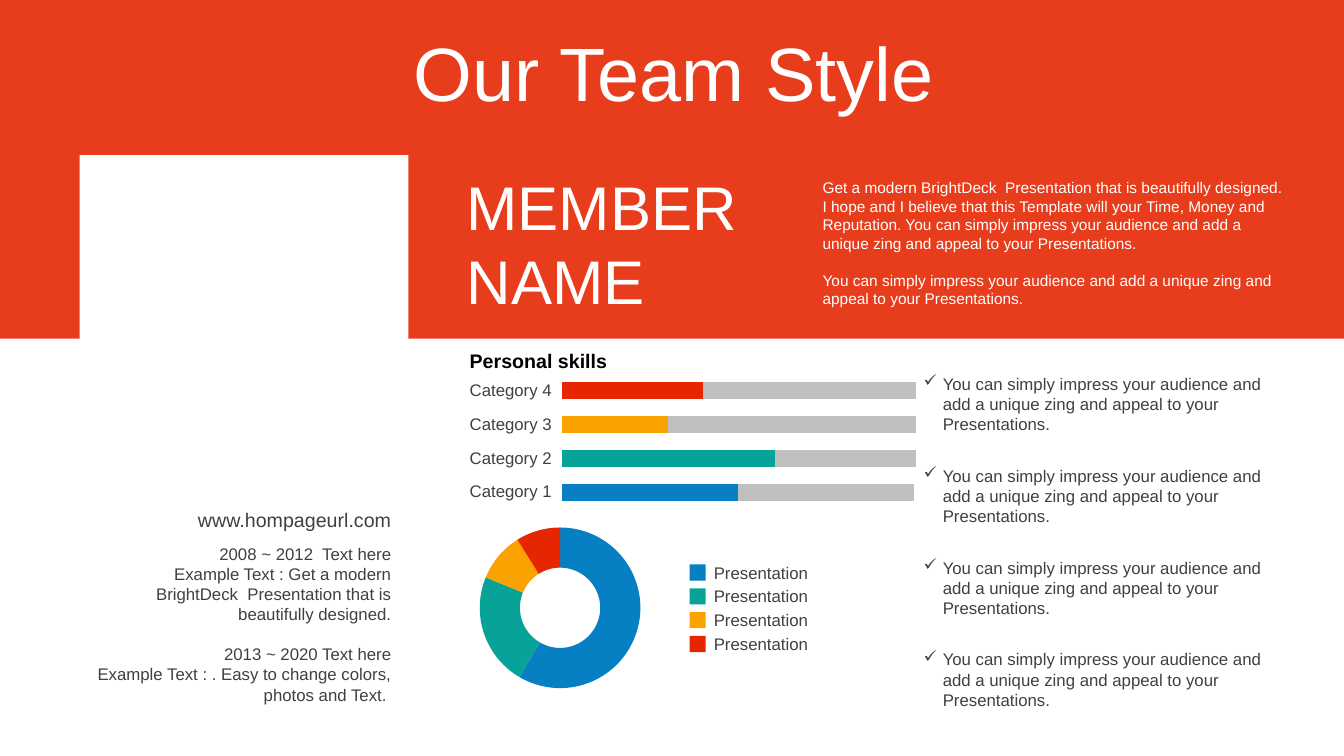
from lxml import etree
from pptx import Presentation
from pptx import util as u
from pptx.chart.data import CategoryChartData
from pptx.dml.color import RGBColor
from pptx.enum import chart as ch, shapes, text
from pptx.oxml.ns import qn

BLUE, TEAL, AMBER, RED = PALETTE = ["0680C3", "07A398", "FBA200", "E62601"]
WHITE, BLACK, INK, GREY = "FFFFFF", "000000", "404040", "BFBFBF"
IMPRESS = ("You can simply impress your audience and add a unique zing "
           "and appeal to your Presentations.")


def color(value):
    return RGBColor.from_string(value)


def paint(fill, value):
    fill.solid()
    fill.fore_color.rgb = color(value)


def inner_layout(chart, x, y, w, h):
    """Fix the plot area as fractions of the chart frame."""
    plot_area = chart._chartSpace.chart.plotArea
    for old in plot_area.findall(qn("c:layout")):
        plot_area.remove(old)
    layout = etree.Element(qn("c:layout"))
    manual = etree.SubElement(layout, qn("c:manualLayout"))
    for tag, val in [("layoutTarget", "inner"), ("xMode", "edge"),
                     ("yMode", "edge"), ("x", x), ("y", y), ("w", w), ("h", h)]:
        etree.SubElement(manual, qn("c:" + tag)).set("val", str(val))
    plot_area.insert(0, layout)


class Board:
    """Holds the style and the current slide."""
    font = "Arial"

    def __init__(self, slide):
        self.slide = slide

    def rect(self, x, y, w, h, fill, alpha=None):
        box = self.slide.shapes.add_shape(
            shapes.MSO_SHAPE.RECTANGLE, *map(u.Inches, (x, y, w, h)))
        box.shadow.inherit = False
        paint(box.fill, fill)
        box.line.fill.background()
        if alpha is not None:
            tint = box.fill._xPr.find(".//" + qn("a:srgbClr"))
            etree.SubElement(tint, qn("a:alpha")).set("val", str(alpha * 1000))

    def text(self, content, x, y, w, h, size=12, ink=INK, bold=False,
             align="LEFT", anchor="TOP", inset=0.1, bullet=None,
             gap_before=(), gap=0, line_spacing=None):
        """content is a list of paragraphs; gap_before lists those set apart."""
        box = self.slide.shapes.add_textbox(*map(u.Inches, (x, y, w, h)))
        frame = box.text_frame
        frame.word_wrap = True
        frame.vertical_anchor = text.MSO_ANCHOR[anchor]
        frame.margin_left = frame.margin_right = u.Inches(inset)
        for i, words in enumerate(content):
            para = frame.paragraphs[0] if i == 0 else frame.add_paragraph()
            para.alignment = text.PP_ALIGN[align]
            if line_spacing:
                para.line_spacing = line_spacing
            if i in gap_before:
                para.space_before = u.Pt(gap)
            run = para.add_run()
            run.text = words
            run.font.name, run.font.size = self.font, u.Pt(size)
            run.font.bold = bold
            run.font.color.rgb = color(ink)
            if bullet:
                props = para._p.get_or_add_pPr()
                props.set("marL", str(u.Inches(0.19)))
                props.set("indent", str(-u.Inches(0.19)))
                etree.SubElement(props, qn("a:buChar")).set("char", bullet)

    def chart(self, kind, categories, series, x, y, w, h, layout):
        data = CategoryChartData()
        data.categories = categories
        for name, values in series:
            data.add_series(name, values)
        chart = self.slide.shapes.add_chart(
            ch.XL_CHART_TYPE[kind], *map(u.Inches, (x, y, w, h)), data).chart
        chart.has_legend = chart.has_title = False
        chart.font.name, chart.font.size = self.font, u.Pt(12)
        chart.font.color.rgb = color(INK)
        chart.plots[0].vary_by_categories = False
        for i, tint in enumerate(PALETTE):
            paint(chart.plots[0].series[0].points[i].format.fill, tint)
        inner_layout(chart, *layout)
        return chart


def main():
    deck = Presentation()
    deck.slide_width, deck.slide_height = u.Inches(13.33), u.Inches(7.5)
    board = Board(deck.slides.add_slide(deck.slide_layouts[6]))

    # Header band and photo area
    board.rect(0, 0, 13.33, 3.36, RED, alpha=89)
    board.rect(0.79, 1.54, 3.26, 3.65, WHITE)
    board.text(["Our Team Style"], 0.35, 0.37, 12.66, 0.79, size=54, ink=WHITE,
               align="CENTER", anchor="MIDDLE", line_spacing=0.9,
               gap_before=[0], gap=10)

    # Member name and introduction
    board.text(["MEMBER", "NAME"], 4.53, 1.63, 3.33, 1.58, size=44, ink=WHITE)
    board.text(["Get a modern BrightDeck  Presentation that is beautifully "
                "designed. I hope and I believe that this Template will your "
                "Time, Money and Reputation. You can simply impress your "
                "audience and add a unique zing and appeal to your "
                "Presentations.", IMPRESS],
               8.06, 1.72, 4.78, 1.4, size=11, ink=WHITE, gap_before=[1], gap=13.2)

    # Contact and career
    board.text(["www.hompageurl.com"], 1.65, 4.99, 2.33, 0.34, size=14,
               align="RIGHT", anchor="MIDDLE")
    board.text(["2008 ~ 2012  Text here",
                "Example Text : Get a modern BrightDeck  Presentation that is "
                "beautifully designed.",
                "2013 ~ 2020 Text here",
                "Example Text : . Easy to change colors, photos and Text. "],
               0.79, 5.34, 3.19, 1.72, align="RIGHT", gap_before=[2], gap=14.4)

    # Personal skills bars
    board.text(["Personal skills"], 4.56, 3.41, 3.43, 0.34, size=14, ink=BLACK,
               bold=True)
    skills = board.chart(
        "BAR_STACKED", [f"Category {n}" for n in range(1, 5)],
        [("Series 1", (71, 86, 43, 57)), ("Series 2", (71, 57, 100, 86))],
        4.56, 3.68, 5.33, 1.4, layout=(0.19, 0.02, 0.66, 0.96))
    bars = skills.plots[0]
    bars.gap_width, bars.overlap = 100, 100
    paint(bars.series[1].format.fill, GREY)
    skills.category_axis.format.line.fill.background()
    skills.value_axis.minimum_scale = 0
    skills.value_axis.maximum_scale = 143
    skills.value_axis.has_major_gridlines = False
    skills.value_axis.visible = False

    # Doughnut with its key
    share = board.chart("DOUGHNUT", ["1", "2", "3", "4"],
                        [("Series 1", (59, 23, 10, 9))],
                        4.51, 5.1, 2.07, 1.88, layout=(0.12, 0.07, 0.77, 0.85))
    ring = share.plots[0]._element
    hole = ring.find(qn("c:holeSize"))
    if hole is None:
        hole = etree.SubElement(ring, qn("c:holeSize"))
    hole.set("val", "50")
    for i, tint in enumerate(PALETTE):
        top = 5.6 + i * 0.71 / 3
        board.rect(6.84, top, 0.16, 0.16, tint)
        board.text(["Presentation"], 7.08, top - 0.07, 1.14, 0.3, inset=0)

    # Check list
    for i in range(4):
        board.text([IMPRESS], 9.04, 3.66 + i * 0.91, 3.81, 0.71, inset=0.12,
                   bullet="✓")

    deck.save("out.pptx")


if __name__ == "__main__":
    main()
